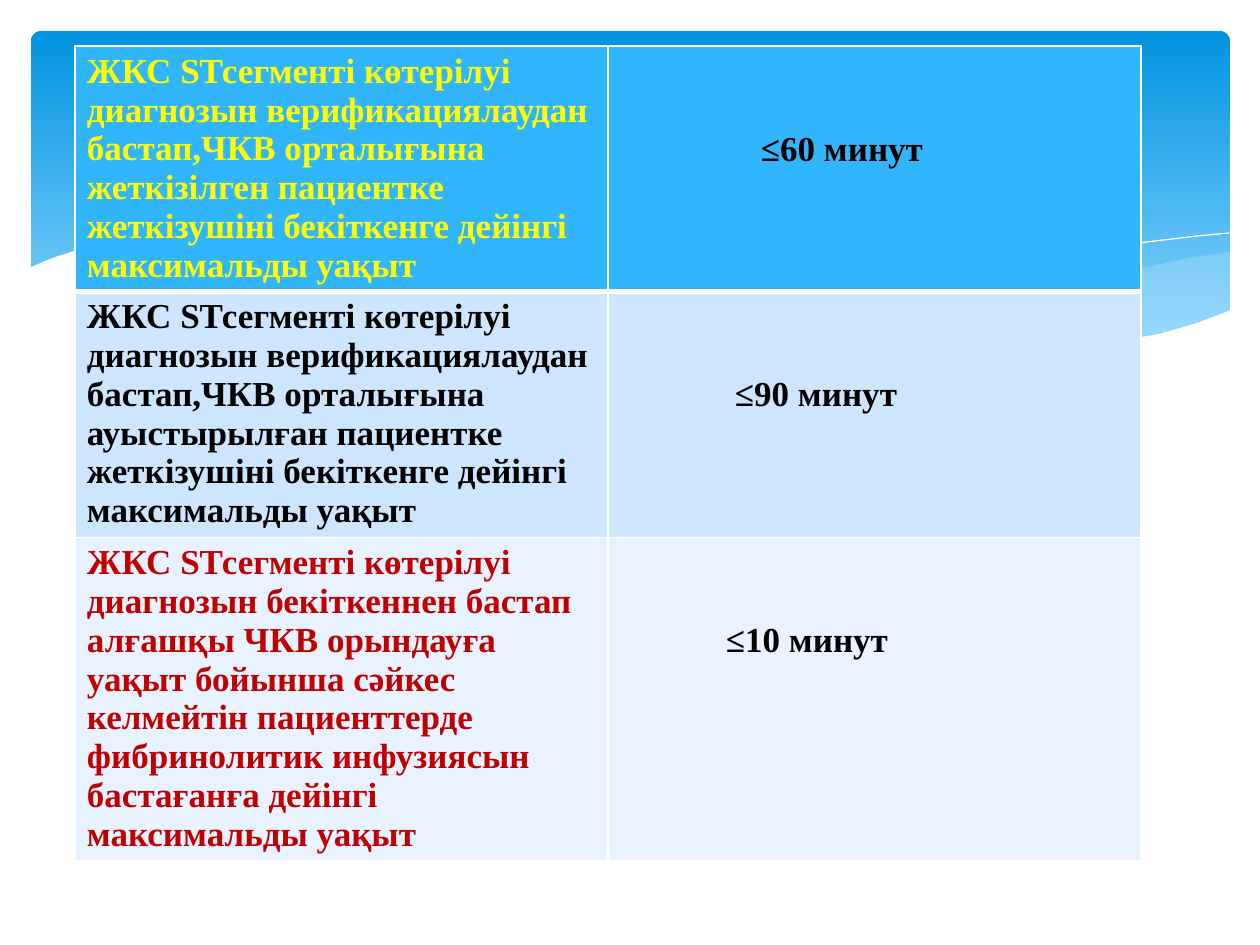
import pptx
import pptx.util
import pptx.dml.color
import pptx.enum.shapes
import pptx.oxml
import pptx.oxml.ns
import lxml.etree

PX = 914400 / 126
FONT = "Times New Roman"
BLUE, WHITE, PALE = "31B6FD", "FFFFFF", "C6E7FC"


def px(n):
    return pptx.util.Emu(round(n * PX))


def rgb(c):
    return pptx.dml.color.RGBColor.from_string(c)


class Deck:
    def __init__(self, width, height):
        self.prs = pptx.Presentation()
        self.prs.slide_width, self.prs.slide_height = px(width), px(height)
        self.s = self.prs.slides.add_slide(self.prs.slide_layouts[6])

    def panel(self, x, y, w, h, radius, top, bottom):
        kind = pptx.enum.shapes.MSO_SHAPE.ROUNDED_RECTANGLE
        sp = self.s.shapes.add_shape(kind, px(x), px(y), px(w), px(h))
        sp.shadow.inherit = False
        sp.adjustments[0] = radius
        sp.line.fill.background()
        sp.fill.gradient()
        sp.fill.gradient_angle = 270
        for stop, c, pos in zip(sp.fill.gradient_stops, (top, bottom), (0, 0.9)):
            stop.color.rgb = rgb(c)
            stop.position = pos

    def outline(self, points, closed):
        fb = self.s.shapes.build_freeform(*points[0], scale=PX)
        fb.add_line_segments(points[1:], close=closed)
        sp = fb.convert_to_shape()
        sp.shadow.inherit = False
        return sp

    def area(self, points, color, opacity=100):
        sp = self.outline(points, True)
        sp.line.fill.background()
        sp.fill.solid()
        sp.fill.fore_color.rgb = rgb(color)
        if opacity < 100:
            clr = sp.fill._xPr.find(".//" + pptx.oxml.ns.qn("a:srgbClr"))
            alpha = lxml.etree.SubElement(clr, pptx.oxml.ns.qn("a:alpha"))
            alpha.set("val", str(opacity * 1000))

    def curve(self, points, color):
        sp = self.outline(points, False)
        sp.fill.background()
        sp.line.color.rgb = rgb(color)
        sp.line.width = pptx.util.Pt(0)

    def table(self, x, y, widths, heights):
        frame = self.s.shapes.add_table(
            len(heights), len(widths), px(x), px(y), px(sum(widths)), px(sum(heights)))
        tbl = frame.table
        for col, w in zip(tbl.columns, widths):
            col.width = px(w)
        for row, h in zip(tbl.rows, heights):
            row.height = px(h)
        return tbl

    def borders(self, cell, color, widths):
        tc_pr = cell._tc.get_or_add_tcPr()
        for side, w in zip("LRTB", widths):
            tc_pr.append(pptx.oxml.parse_xml(
                f'<a:ln{side} {pptx.oxml.ns.nsdecls("a")} w="{pptx.util.Pt(w)}">'
                f'<a:solidFill><a:srgbClr val="{color}"/></a:solidFill></a:ln{side}>'))

    def cell(self, cell, text, color, fill, left=12, top=6):
        cell.margin_left, cell.margin_top = px(left), px(top)
        cell.fill.solid()
        cell.fill.fore_color.rgb = rgb(fill)
        p = cell.text_frame.paragraphs[0]
        p.text = text
        p.font.name, p.font.size, p.font.bold = FONT, pptx.util.Pt(20), True
        p.font.color.rgb = rgb(color)


SWELL = [(1229, 252), (1194, 257), (1142, 268), (1085, 281), (1014, 299), (949, 312),
         (890, 324), (833, 334), (888, 341), (939, 347), (1012, 350), (1076, 348),
         (1130, 340), (1178, 330), (1230, 311), (1230, 252)]
RIBBON = [(1125, 344), (1055, 334), (977, 320), (890, 302), (793, 280), (717, 262),
          (648, 249), (586, 241), (529, 236), (455, 233), (394, 237), (360, 241),
          (431, 251), (509, 266), (566, 280), (668, 302), (757, 321), (838, 335),
          (910, 345), (989, 350), (1056, 350)]
FALLING = [(389, 246), (433, 239), (505, 236), (591, 238), (672, 244), (766, 257),
           (876, 276), (1002, 304), (1143, 343)]
RISING = [(772, 324), (823, 310), (907, 289), (1016, 265), (1091, 251), (1147, 242),
          (1198, 236), (1229, 233)]
WAVE = [(1231, 310), (1197, 323), (1159, 334), (1118, 341), (1071, 347), (1019, 349),
        (959, 347), (892, 340), (816, 330), (730, 315), (634, 294), (563, 277),
        (493, 261), (428, 248), (368, 239), (315, 234), (266, 232), (223, 232),
        (184, 233), (150, 236), (120, 241), (96, 246), (74, 251), (58, 256),
        (45, 261), (29, 268), (29, 415), (1231, 415)]

START = "ЖКС SТсегменті көтерілуі диагнозын "
CENTRE = "верификациялаудан бастап,ЧКВ орталығына "
END = " пациентке жеткізушіні бекіткенге дейінгі максимальды уақыт"
ROWS = [
    (START + CENTRE + "жеткізілген" + END, "FFFF00", "≤60 минут", 153, BLUE),
    (START + CENTRE + "ауыстырылған" + END, "000000", "≤90 минут", 127, "CEE5FE"),
    (START + "бекіткеннен бастап алғашқы ЧКВ орындауға уақыт бойынша сәйкес келмейтін "
     "пациенттерде фибринолитик инфузиясын бастағанға дейінгі максимальды уақыт",
     "C00000", "≤10 минут", 118, "E8F3FF"),
]


def main():
    deck = Deck(1260, 945)
    deck.panel(31, 31, 1199, 340, 0.03, "0293E0", "83D3FE")
    deck.area(SWELL, PALE, 29)
    deck.area(RIBBON, PALE, 40)
    deck.curve(FALLING, WHITE)
    deck.curve(RISING, WHITE)
    deck.area(WAVE, WHITE)

    tbl = deck.table(75, 46, [533, 533], [245, 246, 323])
    for c in tbl.rows[0].cells:
        deck.borders(c, WHITE, (1, 1, 1, 3))
    for i, (task, color, limit, indent, fill) in enumerate(ROWS):
        deck.cell(tbl.cell(i, 0), task, color, fill)
        deck.cell(tbl.cell(i, 1), limit, "000000", fill, indent, 84)

    deck.prs.save("out.pptx")


if __name__ == "__main__":
    main()
